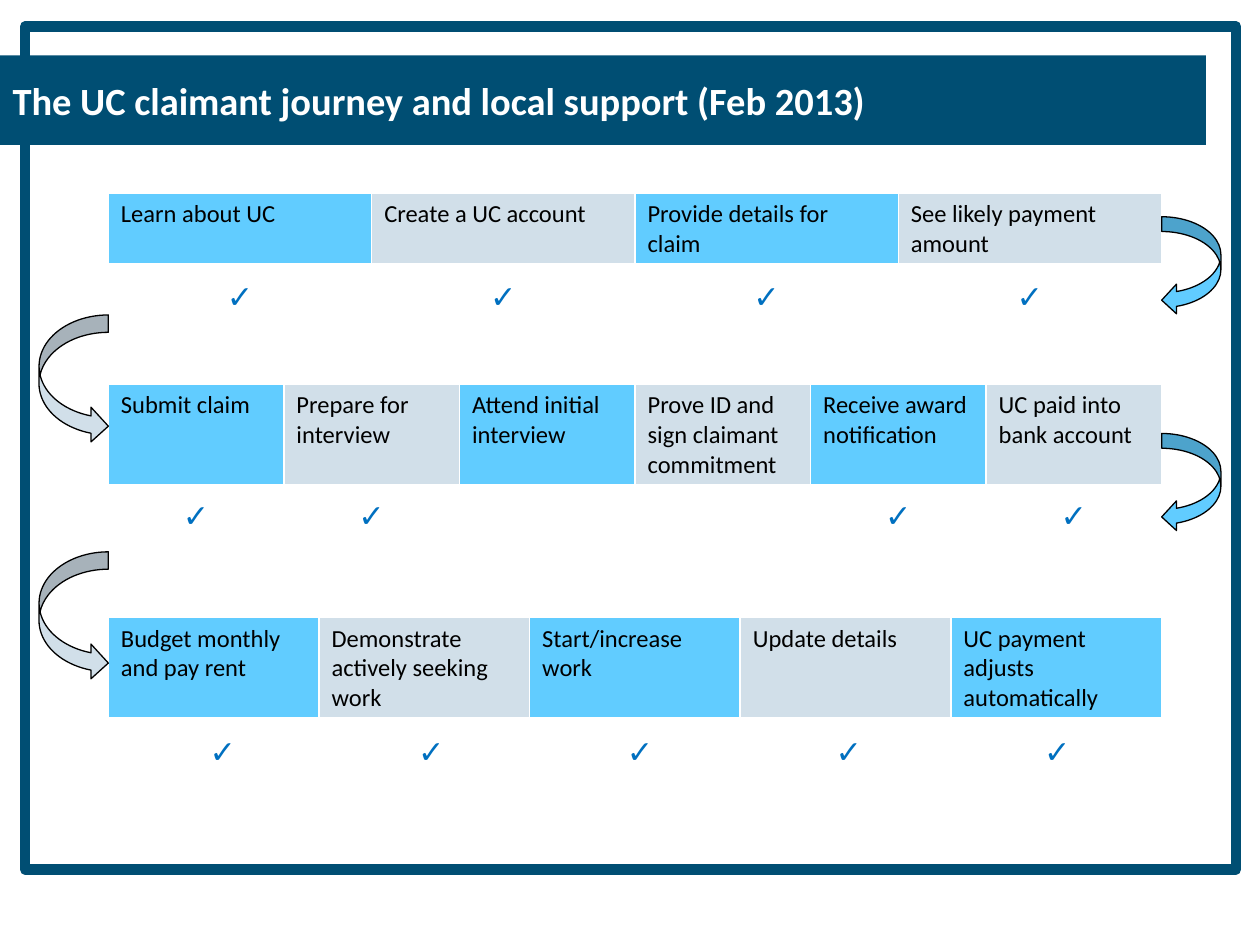
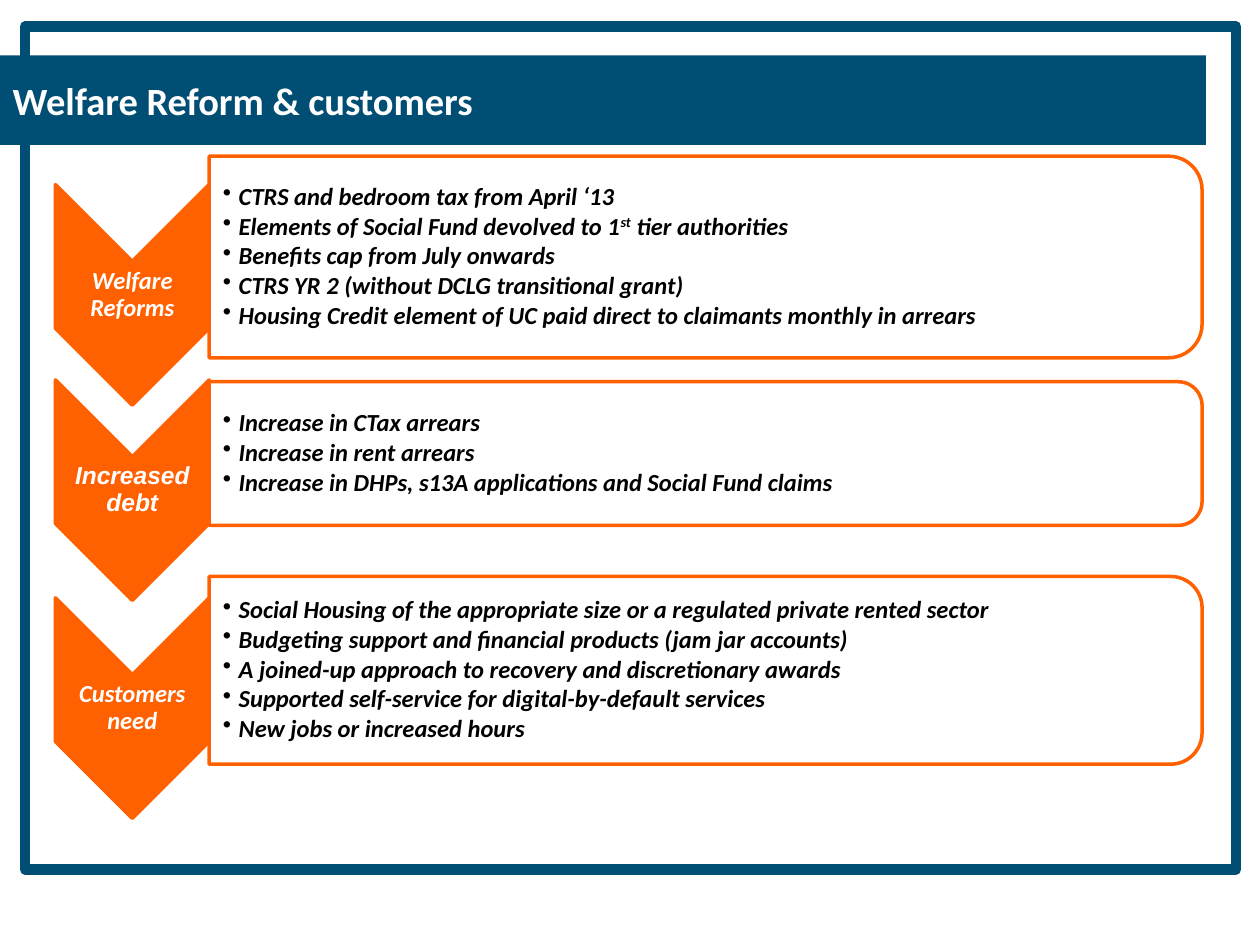
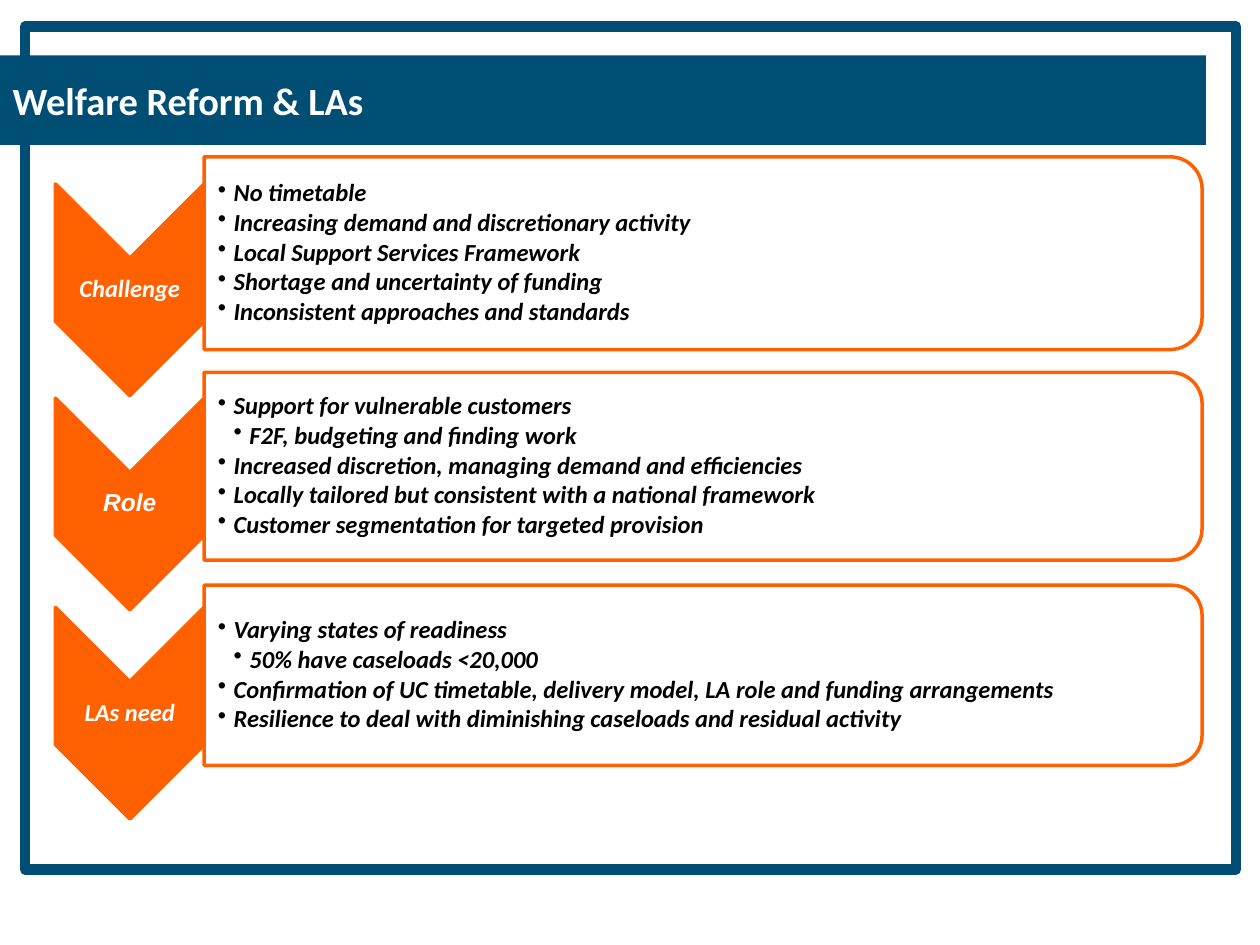
from lxml import etree
from pptx import Presentation
from pptx.dml.color import RGBColor
from pptx.enum import shapes, text
from pptx.oxml import ns
from pptx.util import Inches, Pt

NAVY = RGBColor(0x00, 0x4E, 0x73)
SKY = RGBColor(0x61, 0xCC, 0xFF)
MIST = RGBColor(0xD1, 0xDF, 0xE9)
TICK_BLUE = RGBColor(0x00, 0x70, 0xC0)
ORANGE = RGBColor(0xFF, 0x61, 0x00)
WHITE = RGBColor(0xFF, 0xFF, 0xFF)
BLACK = RGBColor(0x00, 0x00, 0x00)

TITLE_ONLY = 5
TABLE_LEFT, TABLE_WIDTH = 0.86, 8.36
TABLE_RIGHT = TABLE_LEFT + TABLE_WIDTH
TICK_ROW = 0.41
CHEVRON_LEFT = 0.44
PANEL_RIGHT = 9.54
BULLET_INDENT = 0.125

# Table top, height, step names; ticks top, left, one mark per step
JOURNEY = [
    (1.53, 0.57, ["Learn about UC", "Create a UC account", "Provide details for claim",
                  "See likely payment amount"], 2.17, 0.86, "✓✓✓✓"),
    (3.05, 0.8, ["Submit claim", "Prepare for interview", "Attend initial interview",
                 "Prove ID and sign claimant commitment", "Receive award notification",
                 "UC paid into bank account"], 3.91, 0.86, "✓✓  ✓✓"),
    (4.9, 0.8, ["Budget monthly and pay rent", "Demonstrate actively seeking work",
                "Start/increase work", "Update details",
                "UC payment adjusts automatically"], 5.78, 0.94, "✓✓✓✓✓"),
]

# Label, label font, chevron middle, panel middle, panel height, points
# A leading tab marks a second-level point; ^ encloses a superscript.
CUSTOMERS = [
    ("Welfare Reforms", "Calibri", 2.34, 2.04, 1.6, [
        "CTRS and bedroom tax from April ‘13",
        "Elements of Social Fund devolved to 1^st^ tier authorities",
        "Benefits cap from July onwards",
        "CTRS YR 2 (without DCLG transitional grant)",
        "Housing Credit element of UC paid direct to claimants monthly in arrears"]),
    ("Increased debt", "Arial", 3.89, 3.6, 1.14, [
        "Increase in CTax arrears",
        "Increase in rent arrears",
        "Increase in DHPs, s13A applications and Social Fund claims"]),
    ("Customers need", "Calibri", 5.62, 5.32, 1.49, [
        "Social Housing of the appropriate size or a regulated private rented sector",
        "Budgeting support and financial products (jam jar accounts)",
        "A joined-up approach to recovery and discretionary awards",
        "Supported self-service for digital-by-default services",
        "New jobs or increased hours"]),
]
AUTHORITIES = [
    ("Challenge", "Calibri", 2.3, 2.01, 1.53, [
        "No timetable",
        "Increasing demand and discretionary activity",
        "Local Support Services Framework",
        "Shortage and uncertainty of funding",
        "Inconsistent approaches and standards"]),
    ("Role", "Arial", 4.0, 3.7, 1.49, [
        "Support for vulnerable customers",
        "\tF2F, budgeting and finding work",
        "Increased discretion, managing demand and efficiencies",
        "Locally tailored but consistent with a national framework",
        "Customer segmentation for targeted provision"]),
    ("LAs need", "Calibri", 5.66, 5.36, 1.43, [
        "Varying states of readiness",
        "\t50% have caseloads <20,000",
        "Confirmation of UC timetable, delivery model, LA role and funding arrangements",
        "Resilience to deal with diminishing caseloads and residual activity"]),
]


def inches(*lengths):
    return [Inches(length) for length in lengths]


def add_bullet(para, level):
    para.level = level
    properties = para._p.get_or_add_pPr()
    properties.set("marL", str(Inches(BULLET_INDENT * level)))
    properties.set("indent", str(-Inches(BULLET_INDENT)))
    etree.SubElement(properties, ns.qn("a:buChar")).set("char", "•")


def write(frame, lines, size=14, font="Calibri", color=BLACK, bold=False, italic=False,
          align=None, spacing=None, after=None, bullets=False):
    frame.word_wrap = True
    for index, line in enumerate(lines):
        para = frame.paragraphs[0] if index == 0 else frame.add_paragraph()
        if bullets:
            add_bullet(para, 2 if line.startswith("\t") else 1)
        para.alignment = align
        para.line_spacing = spacing
        para.space_after = after
        for part, words in enumerate(line.strip().split("^")):
            span = para.add_run()
            span.text = words
            span.font.size, span.font.name = Pt(size), font
            span.font.bold, span.font.italic = bold, italic
            span.font.color.rgb = color
            if part % 2:
                span._r.get_or_add_rPr().set("baseline", "30000")


def add_figure(parent, kind, left, top, width, height, fill=None, line=BLACK, weight=0.75):
    figure = parent.add_shape(kind, *inches(left, top, width, height))
    figure.shadow.inherit = False
    if fill is None:
        figure.fill.background()
    else:
        figure.fill.solid()
        figure.fill.fore_color.rgb = fill
    figure.line.color.rgb = line
    figure.line.width = Pt(weight)
    return figure


def add_turned(parent, kind, left, middle, width, height, fill):
    """Add a shape turned a quarter clockwise that covers width by height as seen."""
    figure = add_figure(parent, kind, left + (width - height) / 2, middle - width / 2,
                        height, width, fill, ORANGE, 2)
    figure.rotation = 90
    return figure


def add_label(parent, left, middle, width, height, lines, inset=0.01, **style):
    box = parent.add_textbox(*inches(left, middle - height / 2, width, height))
    frame = box.text_frame
    frame.margin_left = Inches(inset)
    frame.margin_right = frame.margin_top = frame.margin_bottom = Inches(0.01)
    frame.vertical_anchor = text.MSO_ANCHOR.MIDDLE
    write(frame, lines, bold=True, italic=True, spacing=0.9, **style)


def set_borders(cell):
    properties = cell._tc.get_or_add_tcPr()
    for side, weight in (("L", 1), ("R", 1), ("T", 1), ("B", 3)):
        border = etree.SubElement(properties, ns.qn("a:ln" + side), w=str(Pt(weight)))
        fill = etree.SubElement(border, ns.qn("a:solidFill"))
        etree.SubElement(fill, ns.qn("a:srgbClr"), val=str(WHITE))


def add_row(page, left, top, height, entries, fills, **style):
    """Add a one-row table of equal columns whose fills alternate."""
    grid = page.shapes.add_table(1, len(entries), *inches(
        left, top, TABLE_RIGHT - left, height)).table
    grid.first_row = grid.horz_banding = False
    for index, entry in enumerate(entries):
        cell = grid.cell(0, index)
        set_borders(cell)
        cell.fill.solid()
        cell.fill.fore_color.rgb = fills[index % len(fills)]
        if entry.strip():
            write(cell.text_frame, [entry], **style)


def add_page(deck, title):
    page = deck.slides.add_slide(deck.slide_layouts[TITLE_ONLY])
    band = page.shapes.title
    band.left, band.top, band.width, band.height = inches(0, 0.44, 9.57, 0.71)
    band.fill.solid()
    band.fill.fore_color.rgb = NAVY
    band.text_frame.auto_size = text.MSO_AUTO_SIZE.NONE
    band.text_frame.vertical_anchor = text.MSO_ANCHOR.MIDDLE
    write(band.text_frame, [title], size=22, color=WHITE, bold=True, align=text.PP_ALIGN.LEFT)
    return page


def add_layout_frame(page):
    """Put the page border on the layout, so that every slide shows it."""
    frame = add_figure(page.shapes, shapes.MSO_SHAPE.RECTANGLE, 0.2, 0.21, 9.61, 6.69,
                       line=NAVY, weight=6)
    page.slide_layout.placeholders[0].element.addprevious(frame.element)


def add_journey(page):
    for top, height, steps, tick_top, tick_left, ticks in JOURNEY:
        add_row(page, TABLE_LEFT, top, height, steps, [SKY, MIST])
        add_row(page, tick_left, tick_top, TICK_ROW, ticks, [WHITE], size=18, font="Arial",
                color=TICK_BLUE, bold=True, italic=True, align=text.PP_ALIGN.CENTER)
    for top in (1.72, 3.44):
        add_figure(page.shapes, shapes.MSO_SHAPE.CURVED_LEFT_ARROW,
                   TABLE_RIGHT, top, 0.47, 0.78, SKY)
    for top in (2.5, 4.38):
        add_figure(page.shapes, shapes.MSO_SHAPE.CURVED_RIGHT_ARROW,
                   TABLE_LEFT - 0.55, top, 0.55, 1.02, MIST)


def add_chevron_list(page, items, chevron_width, chevron_height):
    parts = page.shapes.add_group_shape().shapes
    left = CHEVRON_LEFT + chevron_width
    width = PANEL_RIGHT - left
    for label, font, chevron_middle, middle, height, points in items:
        add_turned(parts, shapes.MSO_SHAPE.CHEVRON, CHEVRON_LEFT, chevron_middle,
                   chevron_width, chevron_height, ORANGE)
        add_label(parts, CHEVRON_LEFT, chevron_middle, chevron_width, 0.52, [label], font=font,
                  color=WHITE, align=text.PP_ALIGN.CENTER, after=Pt(5))
        panel = add_turned(parts, shapes.MSO_SHAPE.ROUND_2_SAME_RECTANGLE, left, middle,
                           width, height, WHITE)
        tint = panel.element.spPr.find(ns.qn("a:solidFill"))[0]
        etree.SubElement(tint, ns.qn("a:alpha"), val="90000")
        add_label(parts, left, middle, width - 0.08, height * 0.9, points, inset=0.11,
                  after=Pt(1.8), bullets=True)


def main():
    deck = Presentation()
    deck.slide_width, deck.slide_height = inches(10, 7.5)
    journey = add_page(deck, "The UC claimant journey and local support (Feb 2013)")
    add_layout_frame(journey)
    add_journey(journey)
    add_chevron_list(add_page(deck, "Welfare Reform & customers"), CUSTOMERS, 1.22, 1.75)
    add_chevron_list(add_page(deck, "Welfare Reform & LAs"), AUTHORITIES, 1.18, 1.68)
    deck.save("out.pptx")


if __name__ == "__main__":
    main()
